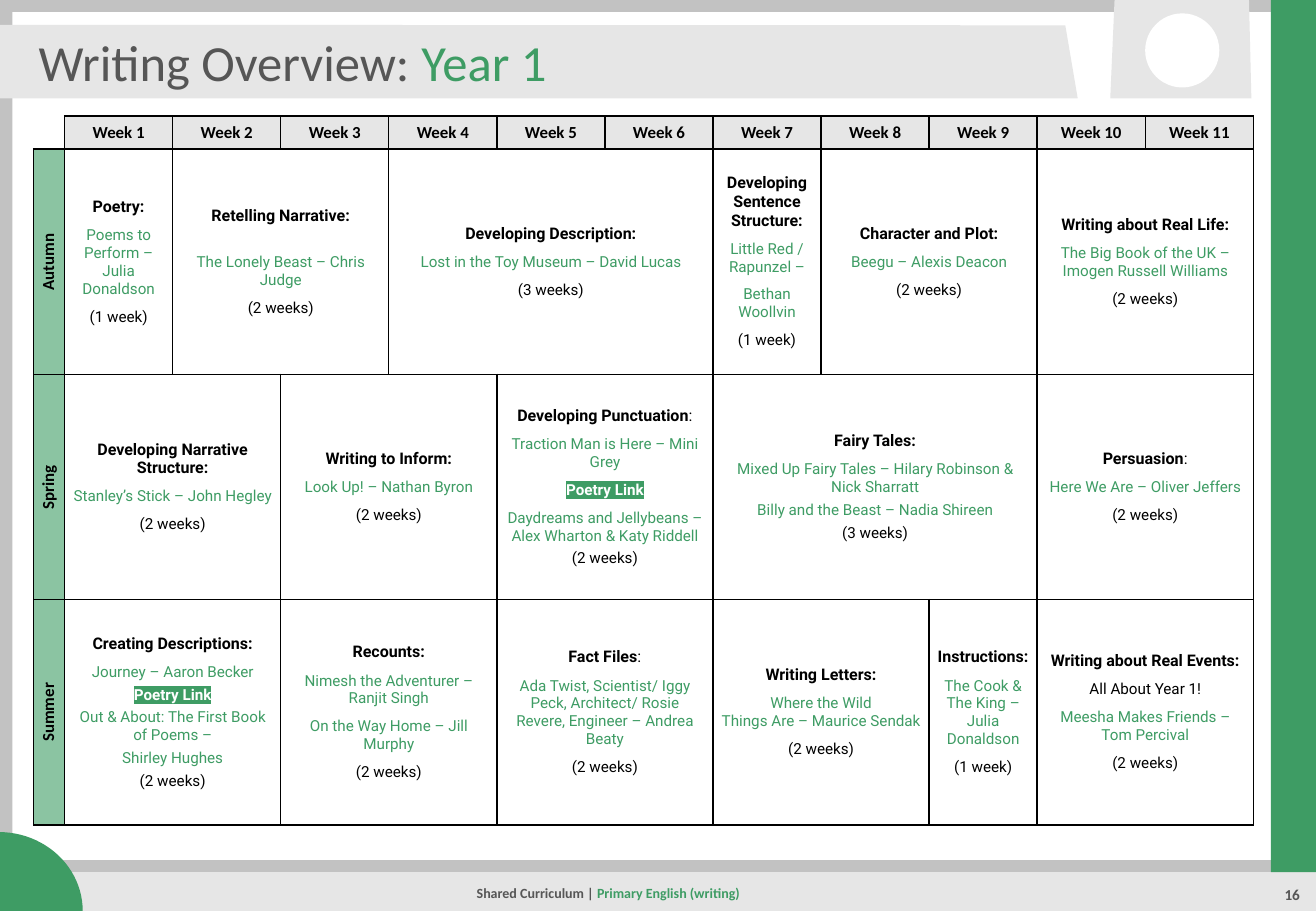
from pptx import Presentation
from pptx.dml.color import RGBColor as RGB
from pptx.enum.shapes import MSO_CONNECTOR as Link, MSO_SHAPE as Kind
from pptx.enum.text import MSO_ANCHOR as Anchor, PP_ALIGN as Align
from pptx.oxml import parse_xml
from pptx.oxml.ns import nsdecls
from pptx.util import Cm, Pt

HUES = {
    "green": "3E9C64", "mint": "8BC4A2", "frame": "C2C2C2", "pale": "E6E6E6",
    "dark": "565656", "black": "000000", "white": "FFFFFF",
}
NS = nsdecls("a")


def paint(shape, hue):
    shape.shadow.inherit = False
    shape.fill.solid()
    shape.fill.fore_color.rgb = RGB.from_string(HUES[hue])
    shape.line.fill.background()


def style(font, name, size, hue, bold=False):
    font.name, font.size, font.bold = name, Pt(size), bold
    font.color.rgb = RGB.from_string(HUES[hue])


deck = Presentation()
deck.slide_width, deck.slide_height = Cm(27.51), Cm(19.05)
slide = deck.slides.add_slide(deck.slide_layouts[6])
shapes = slide.shapes

# Page frame, corner trapezoid and title banner
outer = [(0, 0), (27.51, 0), (27.51, 19.05), (0, 19.05)]
inner = [(0.26, 0.25), (0.26, 18.82), (27.25, 18.82), (27.25, 0.25)]
plate = [(23.3, 0), (26.11, 0), (26.16, 2.06), (23.21, 2.06)]
banner = [(0, 0.52), (22.27, 0.53), (22.53, 2.06), (0, 2.06)]
for hue, rings in (("frame", [outer, inner]), ("pale", [plate]), ("pale", [banner])):
    pen = None
    for ring in rings:
        spots = [(Cm(x), Cm(y)) for x, y in ring]
        if pen is None:
            pen = shapes.build_freeform(*spots[0])
        else:
            pen.move_to(*spots[0])
        pen.add_line_segments(spots[1:], close=True)
    paint(pen.convert_to_shape(), hue)

# Footer rule
rule = shapes.add_connector(Link.STRAIGHT, Cm(0.13), Cm(18.11), Cm(27.51), Cm(18.11))
rule.line.width = Pt(7)
rule.line.color.rgb = RGB.from_string(HUES["frame"])
rule._element.spPr.append(parse_xml(f"<a:effectLst {NS}/>"))

# Footer band, corner arc, disc and side bar
for kind, hue, box in (
    (Kind.RECTANGLE, "pale", (0.81, 18.24, 26.7, 0.81)),
    (Kind.ARC, "green", (-1.78, 17.4, 3.51, 3.3)),
    (Kind.OVAL, "white", (23.94, 0.28, 1.55, 1.55)),
    (Kind.RECTANGLE, "green", (26.57, 0, 0.94, 18.24)),
):
    paint(shapes.add_shape(kind, *map(Cm, box)), hue)

# Title, footer and page number
for box, size, bold, align, space, anchor, parts in (
    ((0.56, 0.64, 21.39, 1.27), 30, False, Align.LEFT, 1, Anchor.MIDDLE,
     [("Writing Overview: ", "dark"), ("Year 1", "green")]),
    ((5.21, 18.31, 15.01, 0.76), 8.3, True, Align.CENTER, 0.9, Anchor.MIDDLE,
     [("Shared Curriculum | ", "dark"), ("Primary English (writing)", "green")]),
    ((26.2, 18.31, 1.63, 0.71), 9, True, Align.CENTER, 1.2, Anchor.TOP,
     [("16", "dark")]),
):
    frame = shapes.add_textbox(*map(Cm, box)).text_frame
    frame.word_wrap, frame.vertical_anchor = True, anchor
    par = frame.paragraphs[0]
    par.alignment, par.line_spacing = align, space
    for text, hue in parts:
        run = par.add_run()
        run.text = text
        style(run.font, "Calibri", size, hue, bold)

# Units by term: weeks, heading, lines, first line with a tight gap below
TERMS = {
    "Autumn": [
        (1, "Poetry:", ["Poems to Perform – Julia Donaldson"], 9),
        (2, "Retelling Narrative:", ["The Lonely Beast – Chris Judge"], 9),
        (3, "Developing Description:", ["Lost in the Toy Museum – David Lucas"], 9),
        (1, "Developing Sentence Structure:",
         ["Little Red / Rapunzel –", "Bethan Woollvin"], 9),
        (2, "Character and Plot:", ["Beegu – Alexis Deacon"], 9),
        (2, "Writing about Real Life:",
         ["The Big Book of the UK – Imogen Russell Williams"], 9),
    ],
    "Spring": [
        (2, "Developing Narrative Structure:", ["Stanley’s Stick – John Hegley"], 9),
        (2, "Writing to Inform:", ["Look Up! – Nathan Byron"], 9),
        (2, "Developing Punctuation:",
         ["Traction Man is Here – Mini Grey", "Poetry Link",
          "Daydreams and Jellybeans – Alex Wharton & Katy Riddell"], 3),
        (3, "Fairy Tales:",
         ["Mixed Up Fairy Tales – Hilary Robinson & Nick Sharratt",
          "Billy and the Beast – Nadia Shireen"], 1),
        (2, "Persuasion:", ["Here We Are – Oliver Jeffers"], 9),
    ],
    "Summer": [
        (2, "Creating Descriptions:",
         ["Journey – Aaron Becker", "Poetry Link",
          "Out & About: The First Book of Poems –", "Shirley Hughes"], 1),
        (2, "Recounts:",
         ["Nimesh the Adventurer – Ranjit Singh", "On the Way Home – Jill Murphy"], 9),
        (2, "Fact Files:",
         ["Ada Twist, Scientist/ Iggy Peck, Architect/ Rosie Revere, "
          "Engineer – Andrea Beaty"], 9),
        (2, "Writing Letters:", ["Where the Wild\vThings Are – Maurice Sendak"], 9),
        (1, "Instructions:", ["The Cook & The King – Julia Donaldson"], 9),
        (2, "Writing about Real Events:",
         ["All About Year 1!", "Meesha Makes Friends – Tom Percival"], 9),
    ],
}
LIGHT = ("Developing Punctuation:", "Persuasion:", "Fact Files:")  # plain colon
WEEKS = 11

# Table grid
table = shapes.add_table(
    4, WEEKS + 1, Cm(0.7), Cm(2.43), Cm(25.51), Cm(14.8)).table
table.first_row = table.horz_banding = False
for i, col in enumerate(table.columns):
    col.width = Cm(2.26 if i else 0.65)
for i, row in enumerate(table.rows):
    row.height = Cm(4.71 if i else 0.69)
    for j, cell in enumerate(row.cells):
        cell.vertical_anchor = Anchor.MIDDLE
        cell.margin_left = cell.margin_right = Cm(0.16 if j else 0.1)
        cell.margin_top = cell.margin_bottom = Cm(0.1 if i and not j else 0)
        if i and j or i == j:
            cell.fill.background()
        else:
            cell.fill.solid()
            cell.fill.fore_color.rgb = RGB.from_string(HUES["mint" if i else "pale"])
        props = cell._tc.get_or_add_tcPr()
        for k, side in enumerate("LRTB"):
            ink = "<a:noFill/>"
            if i or j or side in "RB":
                ink = f'<a:solidFill><a:srgbClr val="{HUES["black"]}"/></a:solidFill>'
            props.insert(k, parse_xml(f'<a:ln{side} {NS} w="12700">{ink}</a:ln{side}>'))

# Small type in the empty corner keeps the header row low
corner = table.cell(0, 0).text_frame.paragraphs[0]
corner._p.append(parse_xml(f'<a:endParaRPr {NS} sz="800"/>'))

# Week and term labels
heads = [(0, n, f"Week {n}") for n in range(1, WEEKS + 1)]
heads += [(n, 0, term) for n, term in enumerate(TERMS, 1)]
for i, j, text in heads:
    cell = table.cell(i, j)
    if i:
        cell._tc.get_or_add_tcPr().set("vert", "vert270")
    par = cell.text_frame.paragraphs[0]
    par.text, par.alignment = text, Align.CENTER
    style(par.font, "Calibri", 10, "black", True)

# Unit cells
for i, units in enumerate(TERMS.values(), 1):
    j = 1
    for span, head, lines, tight in units:
        cell = table.cell(i, j)
        if span > 1:
            cell.merge(table.cell(i, j + span - 1))
        j += span
        frame = cell.text_frame
        for n, text in enumerate([head, *lines, f"({span} week{'s' * (span > 1)})"]):
            par = frame.add_paragraph() if n else frame.paragraphs[0]
            par.alignment = Align.CENTER
            par.space_after = Pt(3 if n >= tight else 6)
            if text in LIGHT:
                for part, bold in ((text[:-1], True), (":", False)):
                    run = par.add_run()
                    run.text, run.font.bold = part, bold
            else:
                par.text = text
            if n == 0:
                style(par.font, "Roboto", 9.5, "black", text not in LIGHT)
            elif text == "Poetry Link":
                style(par.font, "Roboto", 9, "white", True)
                font = par.runs[0].font
                font.color.rgb = RGB.from_string(HUES["white"])
                font._element.append(parse_xml(
                    f'<a:highlight {NS}><a:srgbClr val="{HUES["green"]}"/></a:highlight>'))
            else:
                plain = n > len(lines) or text == "All About Year 1!"
                style(par.font, "Roboto", 9, "black" if plain else "green")
            if n == 1 and head == "Retelling Narrative:":
                par.space_before = Pt(11)

deck.save("out.pptx")
